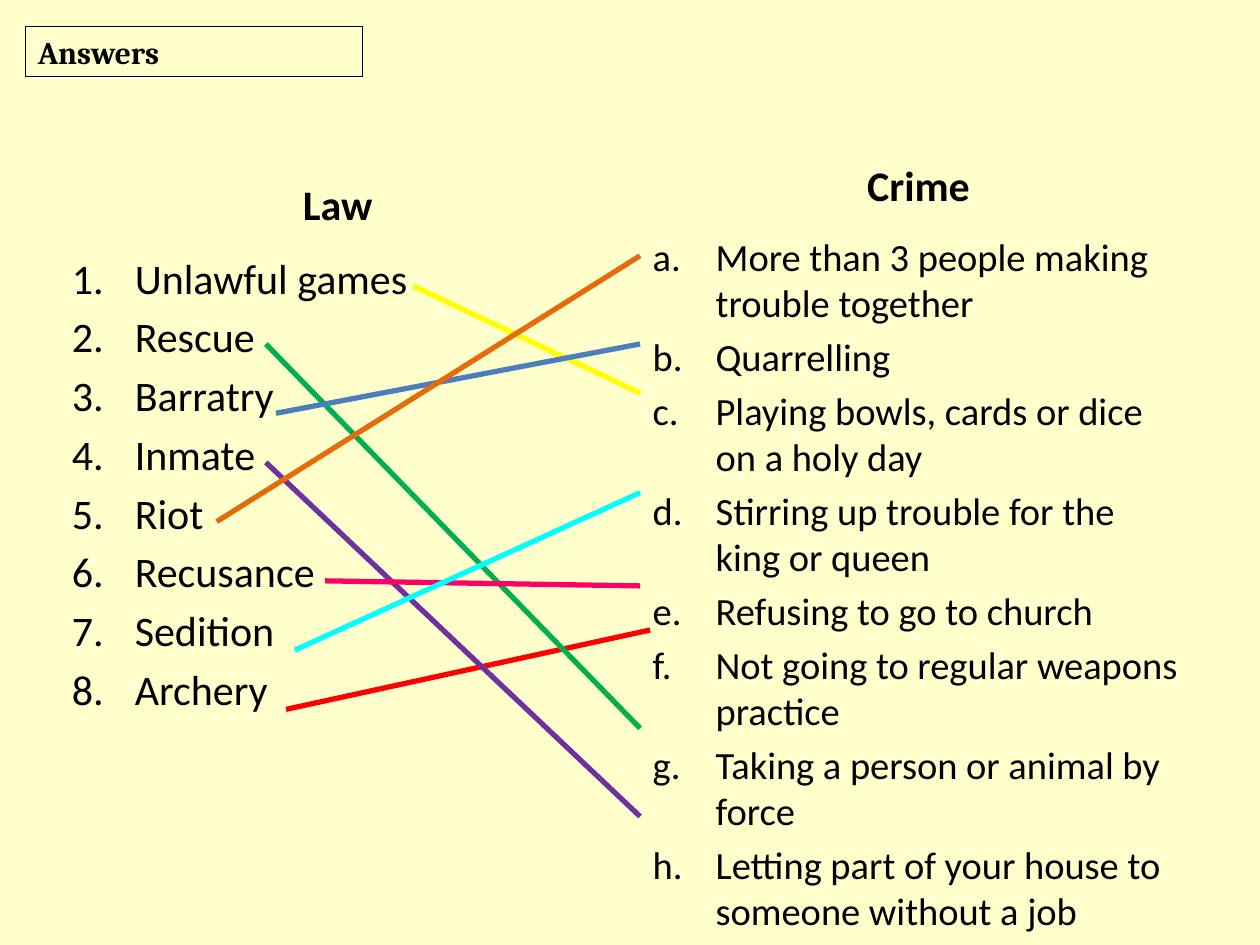
import pptx
import pptx.dml.color
import pptx.enum.shapes
import pptx.enum.text
import pptx.oxml.ns
import pptx.util
from lxml import etree
from pptx.util import Inches

LAWS = ["Unlawful games", "Rescue", "Barratry", "Inmate",
        "Riot", "Recusance", "Sedition", "Archery"]
CRIMES = [
    "More than 3 people making trouble together",
    "Quarrelling",
    "Playing bowls, cards or dice on a holy day",
    "Stirring up trouble for the king or queen",
    "Refusing to go to church",
    "Not going to regular weapons practice",
    "Taking a person or animal by force",
    "Letting part of your house to someone without a job",
]
MATCHES = [
    ((2.27, 5.63), (5.16, 5), "FF0000"),
    ((3.28, 2.27), (5.08, 3.12), "FFFF00"),
    ((2.11, 2.73), (5.08, 5.78), "00B050"),
    ((2.19, 3.28), (5.08, 2.73), "4B7EBC"),
    ((2.11, 3.67), (5.08, 6.48), "7030A0"),
    ((1.72, 4.14), (5.08, 2.03), "E46C0A"),
    ((2.58, 4.61), (5.08, 4.65), "FF0066"),
    ((2.34, 5.16), (5.08, 3.91), "00FFFF"),
]


def color(value):
    """Turn a hex string into a colour."""
    return pptx.dml.color.RGBColor.from_string(value)


def fill_placeholder(shape, box, lines, size, font_name="Calibri", bold=False):
    """Place a placeholder and write one paragraph per line."""
    shape.left, shape.top, shape.width, shape.height = map(Inches, box)
    frame = shape.text_frame
    frame.text = "\n".join(lines)
    frame.word_wrap = True
    frame.auto_size = pptx.enum.text.MSO_AUTO_SIZE.NONE
    for paragraph in frame.paragraphs:
        paragraph.font.name = font_name
        paragraph.font.size = pptx.util.Pt(size)
        paragraph.font.bold = bold
        paragraph.font.color.rgb = color("000000")


def number_paragraph(paragraph, scheme):
    """Give a paragraph a hanging automatic number."""
    properties = paragraph._p.get_or_add_pPr()
    properties.set("marL", str(Inches(0.5)))
    properties.set("indent", str(Inches(-0.5)))
    number = etree.Element(pptx.oxml.ns.qn("a:buAutoNum"), type=scheme)
    font = etree.Element(pptx.oxml.ns.qn("a:buFont"), typeface="+mj-lt")
    properties.insert(0, font)
    font.addnext(number)


def add_title(shape, box):
    """Format the title as a thinly framed label."""
    fill_placeholder(shape, box, ["Answers"], 18, "Cambria", True)
    shape.text_frame.vertical_anchor = pptx.enum.text.MSO_ANCHOR.TOP
    shape.text_frame.paragraphs[0].alignment = pptx.enum.text.PP_ALIGN.LEFT
    shape.line.color.rgb = color("000000")
    shape.line.width = pptx.util.Pt(0.75)


def add_column(heading, body, box, name, items, size, scheme):
    """Fill a column with a centred heading and a numbered list."""
    left, top, width, height = box
    fill_placeholder(heading, (left, top, width, 0.7), [name], 24, bold=True)
    heading.text_frame.vertical_anchor = pptx.enum.text.MSO_ANCHOR.BOTTOM
    heading.text_frame.paragraphs[0].alignment = pptx.enum.text.PP_ALIGN.CENTER
    fill_placeholder(body, (left, top + 0.78, width, height - 0.78), items, size)
    for paragraph in body.text_frame.paragraphs:
        number_paragraph(paragraph, scheme)


def add_matches(slide):
    """Join each law to its crime with a coloured line."""
    for start, end, line_color in MATCHES:
        line = slide.shapes.add_connector(
            pptx.enum.shapes.MSO_CONNECTOR.STRAIGHT, *map(Inches, start + end))
        line.line.color.rgb = color(line_color)
        line.line.width = pptx.util.Pt(3)
        etree.SubElement(line._element.spPr, pptx.oxml.ns.qn("a:effectLst"))


def main():
    """Build and save the answers slide."""
    presentation = pptx.Presentation()
    presentation.slide_width = Inches(10)
    presentation.slide_height = Inches(7.5)
    comparison_layout = presentation.slide_layouts[4]
    slide = presentation.slides.add_slide(comparison_layout)
    slide.background.fill.solid()
    slide.background.fill.fore_color.rgb = color("FFFFCC")
    title, law_heading, law_list, crime_heading, crime_list = slide.placeholders
    add_title(title, (0.2, 0.21, 2.68, 0.4))
    add_column(law_heading, law_list, (0.47, 1.17, 4.42, 6.04),
               "Law", LAWS, 24, "arabicPeriod")
    add_column(crime_heading, crime_list, (5.08, 1.02, 4.42, 6.48),
               "Crime", CRIMES, 22, "alphaLcPeriod")
    add_matches(slide)
    presentation.save("out.pptx")


if __name__ == "__main__":
    main()
